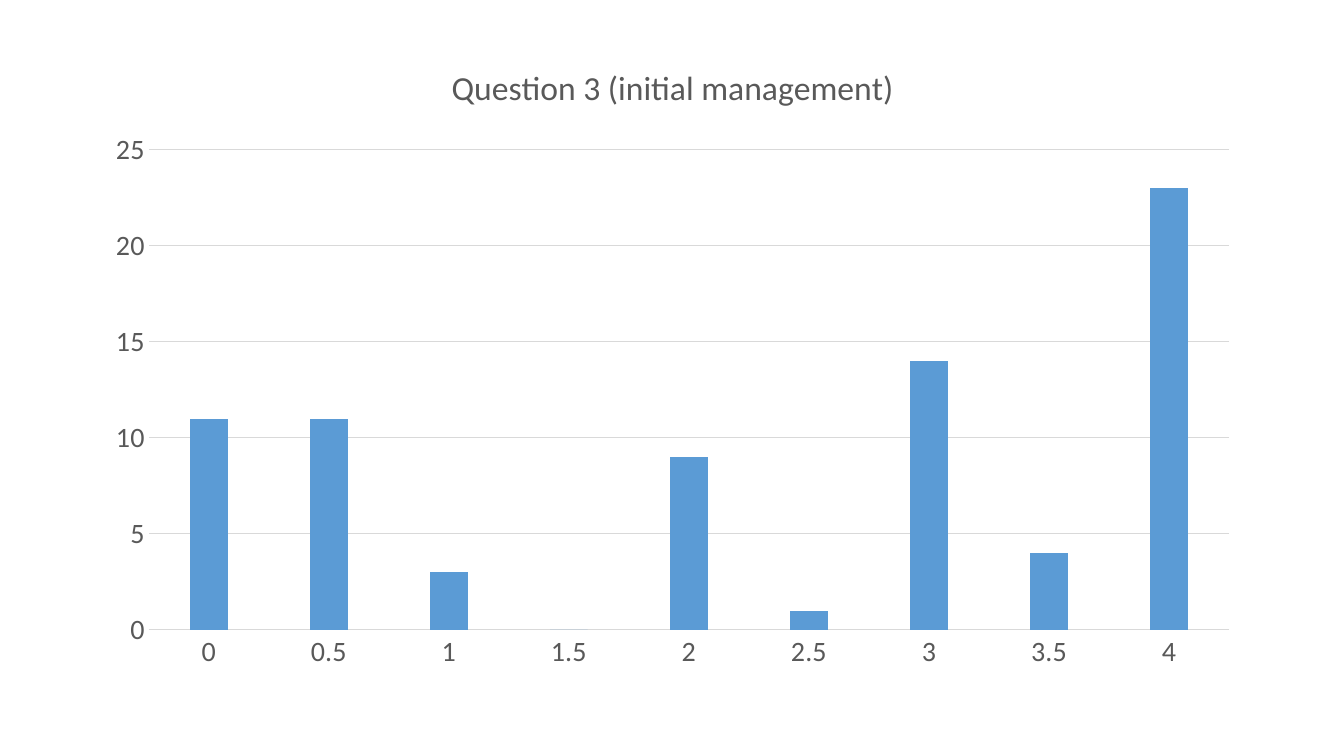
from dataclasses import dataclass

from pptx import Presentation
from pptx.chart.data import CategoryChartData
from pptx.dml.color import RGBColor
from pptx.enum.chart import XL_CHART_TYPE, XL_TICK_MARK
from pptx.util import Emu, Pt

COLUMN = XL_CHART_TYPE.COLUMN_CLUSTERED
NO_TICK = XL_TICK_MARK.NONE
PX = 9144
FONT = "Calibri"
TEXT = "595959"
GRID = "D9D9D9"
BAR = "5B9BD5"


@dataclass
class Score:
    mark: str
    count: int


TITLE = "Question 3 (initial management)"
SCORES = [
    Score("0", 11),
    Score("0.5", 11),
    Score("1", 3),
    Score("1.5", 0),
    Score("2", 9),
    Score("2.5", 1),
    Score("3", 14),
    Score("3.5", 4),
    Score("4", 23),
]


def px(n: int) -> Emu:
    return Emu(n * PX)


def rgb(color: str) -> RGBColor:
    return RGBColor.from_string(color)


def style_font(font, size: int) -> None:
    font.name = FONT
    font.size = Pt(size)
    font.bold = False
    font.color.rgb = rgb(TEXT)


def style_line(line) -> None:
    line.color.rgb = rgb(GRID)
    line.width = Pt(0.75)


def style_axis(axis) -> None:
    axis.major_tick_mark = NO_TICK
    axis.minor_tick_mark = NO_TICK
    style_font(axis.tick_labels.font, 20)


def add_scores(s, title: str, scores: list[Score]) -> None:
    data = CategoryChartData()
    data.categories = [score.mark for score in scores]
    data.add_series(title, [score.count for score in scores])
    chart = s.shapes.add_chart(
        COLUMN, px(92), px(40), px(1150), px(636), data
    ).chart
    style_font(chart.font, 20)
    chart.has_legend = False
    chart.has_title = True
    tf = chart.chart_title.text_frame
    tf.text = title
    style_font(tf.paragraphs[0].runs[0].font, 24)
    chart.chart_title.include_in_layout = False

    style_axis(chart.category_axis)
    style_line(chart.category_axis.format.line)
    values = chart.value_axis
    style_axis(values)
    values.format.line.fill.background()
    values.minimum_scale = 0
    values.maximum_scale = 25
    values.major_unit = 5
    style_line(values.major_gridlines.format.line)

    plot = chart.plots[0]
    plot.gap_width = 219
    plot.overlap = -27
    plot.vary_by_categories = False
    fill = plot.series[0].format.fill
    fill.solid()
    fill.fore_color.rgb = rgb(BAR)


def main() -> None:
    prs = Presentation()
    prs.slide_width = px(1333)
    prs.slide_height = px(750)
    s = prs.slides.add_slide(prs.slide_layouts[6])
    add_scores(s, TITLE, SCORES)
    prs.save("out.pptx")


if __name__ == "__main__":
    main()
